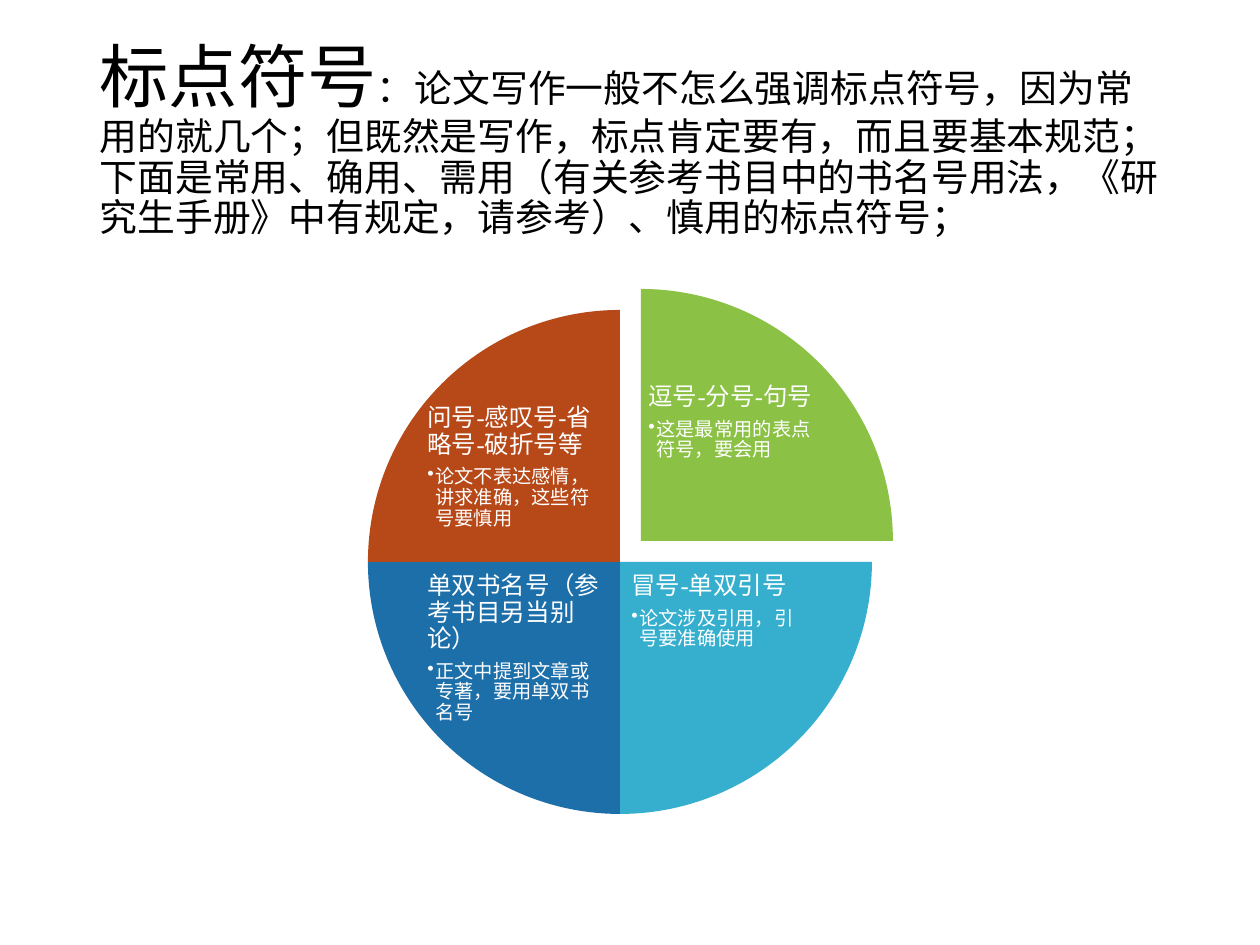
from lxml.etree import SubElement
from pptx import Presentation
from pptx.dml.color import RGBColor
from pptx.enum.shapes import MSO_SHAPE as SHAPE
from pptx.enum.text import MSO_ANCHOR as ANCHOR, MSO_AUTO_SIZE as AUTO, PP_ALIGN as ALIGN
from pptx.oxml.ns import qn
from pptx.util import Pt

PX = 914400 / 126
FONT = "Times New Roman"
BLACK = RGBColor(0x00, 0x00, 0x00)
WHITE = RGBColor(0xFF, 0xFF, 0xFF)
GREEN = RGBColor(0x8B, 0xC1, 0x45)
CYAN = RGBColor(0x36, 0xAF, 0xCE)
BLUE = RGBColor(0x1D, 0x6F, 0xA9)
RUST = RGBColor(0xB7, 0x49, 0x19)

TITLE = [
    ("标点符号", 39.6),
    ("：论文写作一般不怎么强调标点符号，因为常用的就几个；但既然是写作，标点肯定要有，"
     "而且要基本规范；下面是常用、确用、需用（有关参考书目中的书名号用法，"
     "《研究生手册》中有规定，请参考）、慎用的标点符号；", 21.6),
]

# Clockwise from the top: colour, pull-out, label offset from the centre, heading, note
SLICES = [
    (GREEN, (21, -21), (5, -159), "逗号-分号-句号", "这是最常用的表点符号，要会用"),
    (CYAN, (0, 0), (9, 9), "冒号-单双引号", "论文涉及引用，引号要准确使用"),
    (BLUE, (0, 0), (-195, 9), "单双书名号（参考书目另当别论）", "正文中提到文章或专著，要用单双书名号"),
    (RUST, (0, 0), (-195, -159), "问号-感叹号-省略号-破折号等", "论文不表达感情，讲求准确，这些符号要慎用"),
]
LABEL_W, LABEL_H = 186, 150


def px(*lengths):
    return [round(n * PX) for n in lengths]


def add_run(p, text, size, color):
    r = p.add_run()
    r.text = text
    r.font.name, r.font.size = FONT, Pt(size)
    r.font.color.rgb = color


def add_bullet(p, indent):
    pPr = p._p.get_or_add_pPr()
    pPr.set("marL", str(indent))
    pPr.set("indent", str(-indent))
    SubElement(pPr, qn("a:buChar")).set("char", "•")


def fill_title(title, x, y, w, h):
    title.left, title.top, title.width, title.height = px(x, y, w, h)
    tf = title.text_frame
    tf.word_wrap, tf.auto_size = True, AUTO.NONE
    tf.vertical_anchor = ANCHOR.MIDDLE
    p = tf.paragraphs[0]
    p.alignment, p.line_spacing = ALIGN.LEFT, 0.9
    for text, size in TITLE:
        add_run(p, text, size, BLACK)


def add_label(shapes, x, y, heading, note):
    tf = shapes.add_textbox(*px(x, y, LABEL_W, LABEL_H)).text_frame
    tf.word_wrap, tf.auto_size = True, AUTO.NONE
    tf.vertical_anchor = ANCHOR.TOP
    tf.margin_left = tf.margin_right = tf.margin_top = tf.margin_bottom = Pt(1.4)

    p = tf.paragraphs[0]
    p.line_spacing, p.space_after = 0.9, Pt(4.9)
    add_run(p, heading, 14, WHITE)

    p = tf.add_paragraph()
    p.level, p.line_spacing, p.space_after = 1, 0.9, Pt(1.65)
    add_bullet(p, Pt(4.5))
    add_run(p, note, 11, WHITE)


def add_pie(slide, x, y, size):
    shapes = slide.shapes.add_group_shape().shapes
    for i, (color, (dx, dy), (lx, ly), heading, note) in enumerate(SLICES):
        left, top = x + dx, y + dy
        sp = shapes.add_shape(SHAPE.PIE, *px(left, top, size, size))
        # Quarter turns, in units of 100000/60000 degrees
        sp.adjustments[0] = (i + 3) % 4 * 54
        sp.adjustments[1] = i * 54
        sp.shadow.inherit = False
        sp.fill.solid()
        sp.fill.fore_color.rgb = color
        sp.line.fill.background()
        add_label(shapes, left + size // 2 + lx, top + size // 2 + ly, heading, note)


def main():
    prs = Presentation()
    prs.slide_width, prs.slide_height = px(1260, 945)
    slide = prs.slides.add_slide(prs.slide_layouts[5])
    fill_title(slide.shapes.title, 87, 50, 1086, 183)
    add_pie(slide, 368, 310, 504)
    prs.save("out.pptx")


if __name__ == "__main__":
    main()
